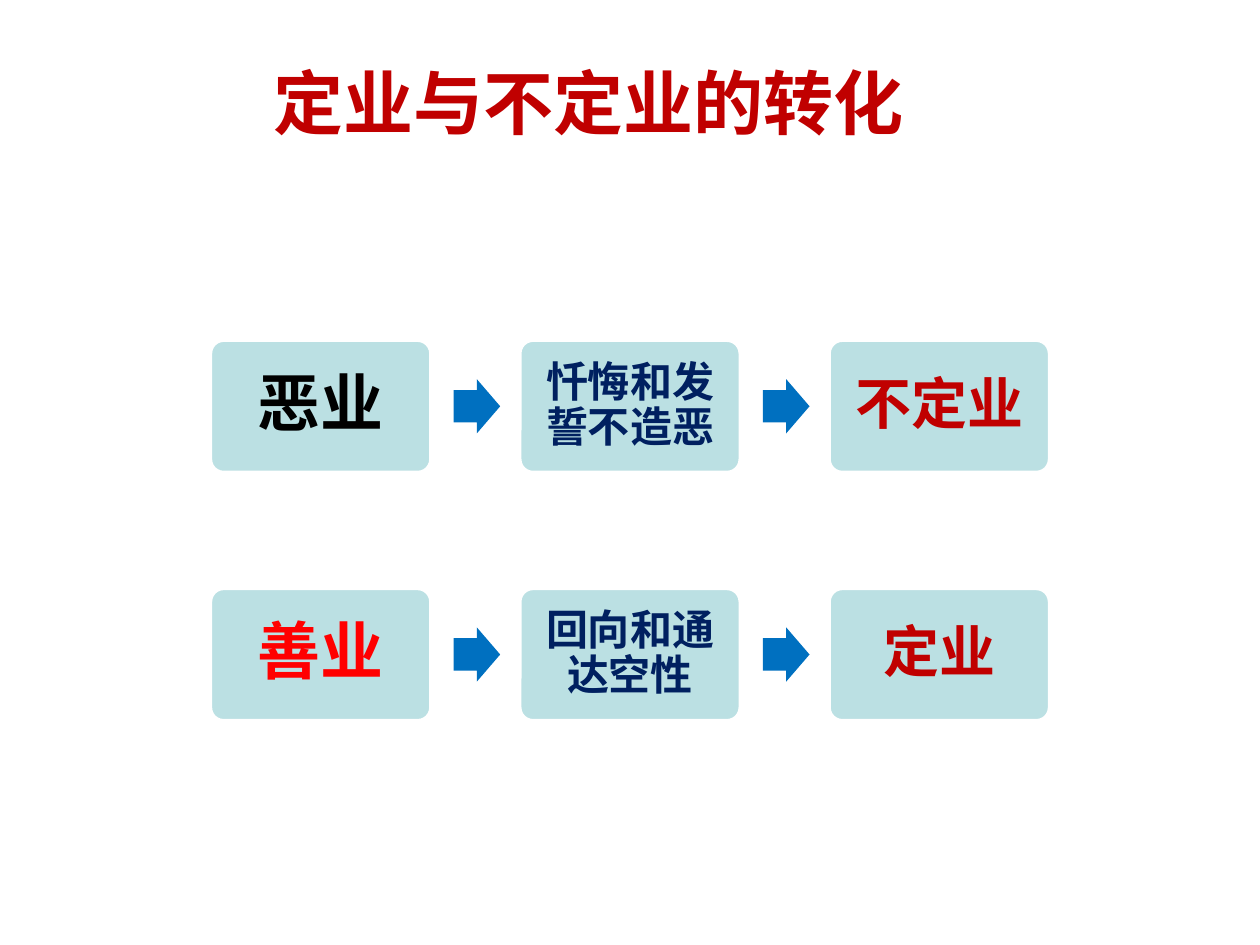
"""Build a slide on how fixed and unfixed karma turn into each other."""
from lxml.etree import SubElement
from pptx import Presentation
from pptx.dml.color import RGBColor
from pptx.enum.shapes import MSO_SHAPE
from pptx.enum.text import MSO_ANCHOR, PP_ALIGN
from pptx.oxml.ns import qn
from pptx.util import Inches, Pt

THEME = {
    "font": "Arial",
    "title": (40, "C00000"),
    "evil": (36, "000000"),
    "good": (36, "FF0000"),
    "means": (24, "002060"),
    "result": (32, "C00000"),
    "box": "BBE0E3",
    "border": "FFFFFF",
    "arrow": "0070C0",
}
LEFT, TOP, COLUMN, ROW = 1.67, 2.7, 2.455, 1.97
BOX_WIDTH, BOX_HEIGHT = 1.75, 1.05
ARROW_WIDTH, ARROW_HEIGHT, ARROW_OFFSET = 0.37, 0.43, 1.93
INSETS = (0.18, 0.13, 0.16)
FLOWS = [
    [("恶业", "evil"), ("忏悔和发誓不造恶", "means"), ("不定业", "result")],
    [("善业", "good"), ("回向和通达空性", "means"), ("定业", "result")],
]


def write(frame, text, style):
    frame.text = text
    frame.word_wrap = True
    frame.vertical_anchor = MSO_ANCHOR.MIDDLE
    paragraph = frame.paragraphs[0]
    paragraph.alignment = PP_ALIGN.CENTER
    font = paragraph.runs[0].font
    size, color = THEME[style]
    font.name, font.size, font.bold = THEME["font"], Pt(size), True
    font.color.rgb = RGBColor.from_string(color)
    return paragraph


def add_filled(kind, left, top, width, height, color):
    shape = slide.shapes.add_shape(
        kind, Inches(left), Inches(top), Inches(width), Inches(height))
    shape.shadow.inherit = False
    shape.fill.solid()
    shape.fill.fore_color.rgb = RGBColor.from_string(THEME[color])
    shape.line.fill.background()
    return shape


deck = Presentation()
deck.slide_width, deck.slide_height = Inches(10), Inches(7.5)
slide = deck.slides.add_slide(deck.slide_layouts[5])

title = slide.shapes.title
title.left, title.top = Inches(0.42), Inches(0)
title.width, title.height = Inches(8.5), Inches(1.61)
write(title.text_frame, "定业与不定业的转化", "title")

for row, flow in enumerate(FLOWS):
    top = TOP + row * ROW
    for column, (words, style) in enumerate(flow):
        left = LEFT + column * COLUMN
        stage = add_filled(MSO_SHAPE.ROUNDED_RECTANGLE, left, top,
                           BOX_WIDTH, BOX_HEIGHT, "box")
        stage.adjustments[0] = 0.1
        stage.line.color.rgb = RGBColor.from_string(THEME["border"])
        stage.line.width = Pt(2)
        frame = stage.text_frame
        frame.margin_left = frame.margin_right = Inches(INSETS[column])
        frame.margin_top = frame.margin_bottom = Inches(INSETS[column])
        paragraph = write(frame, words, style)
        paragraph.line_spacing = 0.9
        space_after = SubElement(paragraph._p.get_or_add_pPr(), qn("a:spcAft"))
        SubElement(space_after, qn("a:spcPct"), val="35000")
        if column < len(flow) - 1:
            arrow = add_filled(MSO_SHAPE.RIGHT_ARROW, left + ARROW_OFFSET,
                               top + (BOX_HEIGHT - ARROW_HEIGHT) / 2,
                               ARROW_WIDTH, ARROW_HEIGHT, "arrow")
            arrow.adjustments[0], arrow.adjustments[1] = 0.6, 0.5

deck.save("out.pptx")
